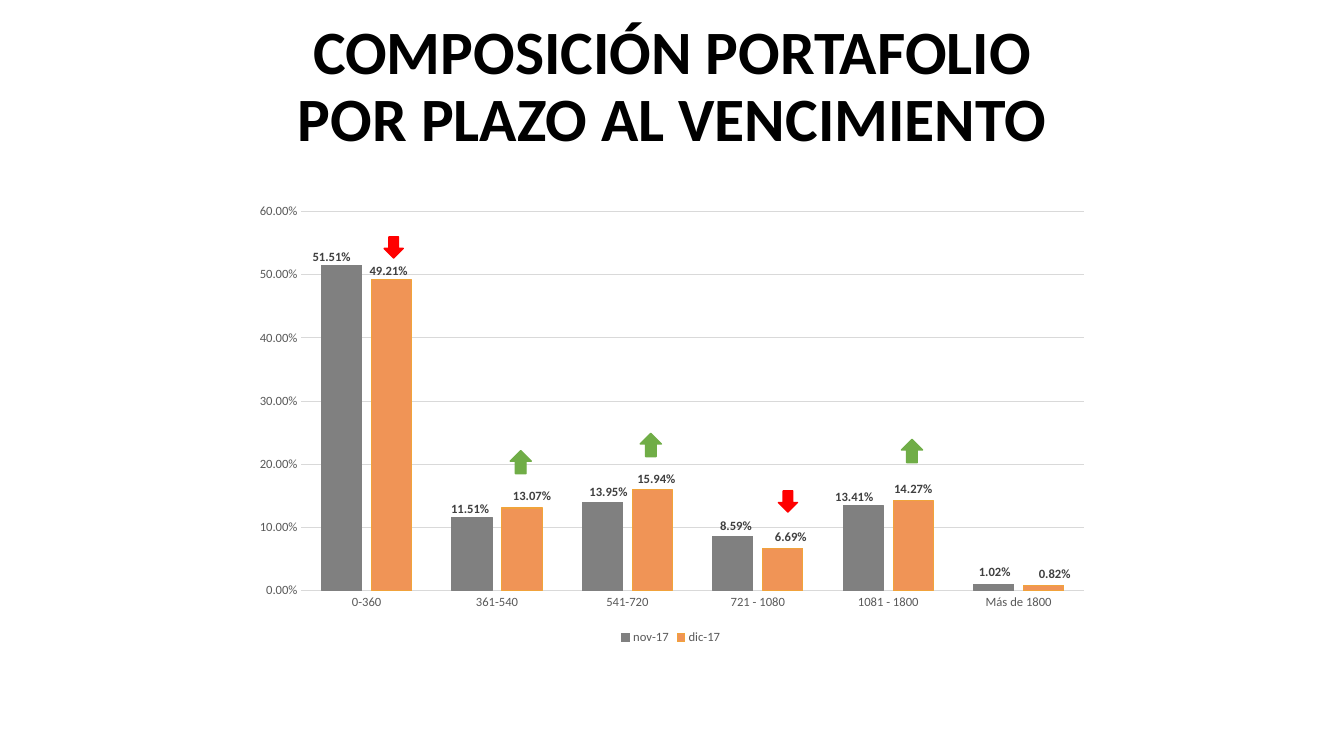
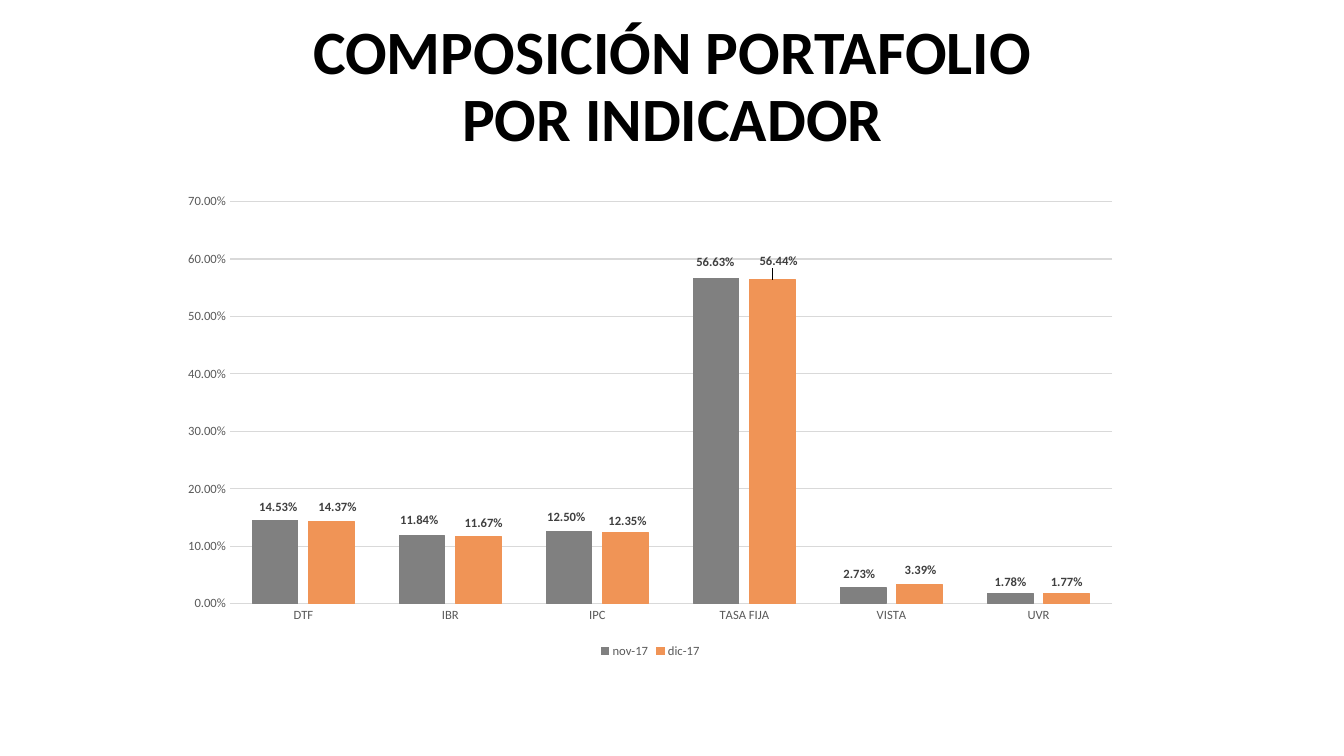
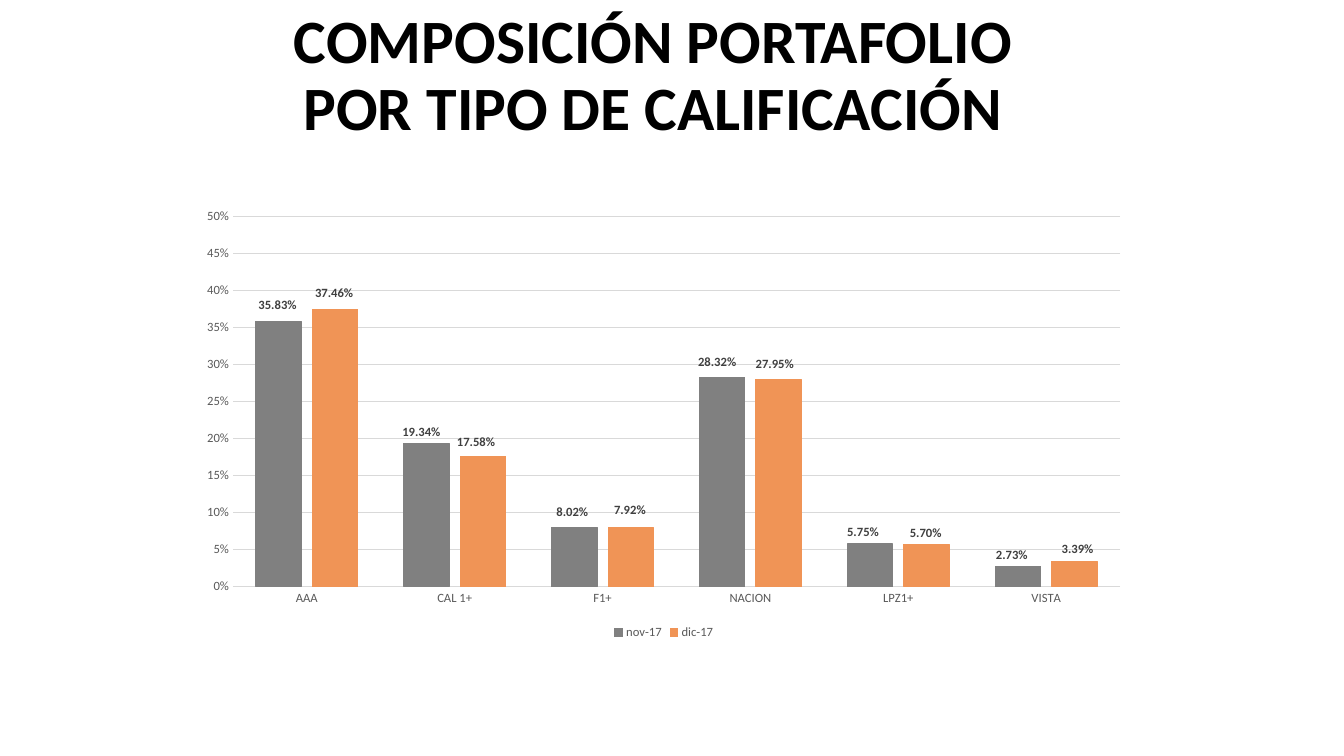
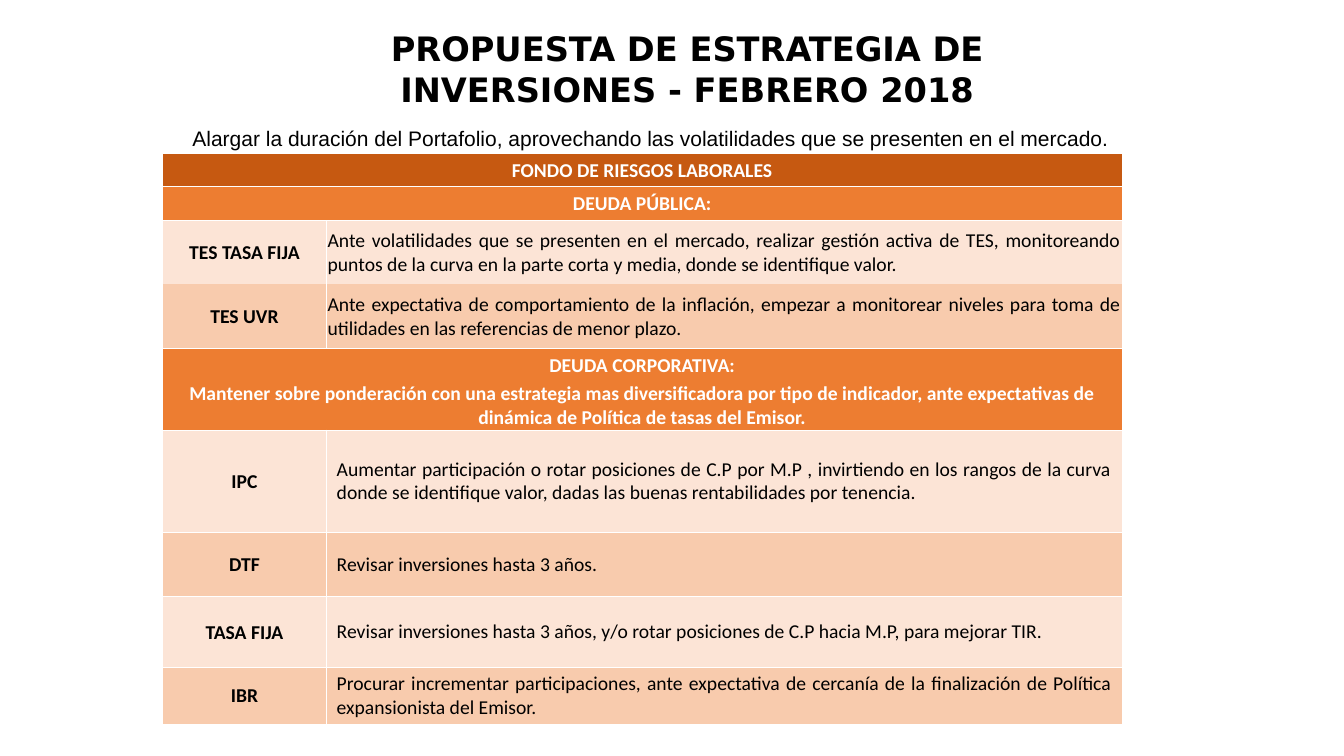
from dataclasses import dataclass

import lxml.etree
import pptx
import pptx.chart.data
import pptx.dml.color
import pptx.enum.chart
import pptx.enum.shapes
import pptx.enum.text
import pptx.oxml.ns
import pptx.util

Inches = pptx.util.Inches
Pt = pptx.util.Pt
qn = pptx.oxml.ns.qn
Align = pptx.enum.text.PP_ALIGN
Anchor = pptx.enum.text.MSO_ANCHOR
Geometry = pptx.enum.shapes.MSO_SHAPE

BLACK, WHITE = "000000", "FFFFFF"
GRAY, ORANGE, GOLD = "808080", "F09456", "F1A33B"
AXIS_TEXT, LABEL_TEXT, GRID = "595959", "404040", "D9D9D9"
RED, GREEN = "FF0000", "70AD47"
HEADER, SECTION, LIGHT, MEDIUM = "C65911", "ED7D31", "FCE4D6", "F8CBAD"


@dataclass(frozen=True)
class Box:
    left: float
    top: float
    width: float
    height: float

    def lengths(self) -> tuple:
        return tuple(Inches(n) for n in (self.left, self.top, self.width, self.height))


@dataclass(frozen=True)
class Series:
    name: str
    values: tuple
    fill: str
    line: str
    label_shifts: tuple


@dataclass(frozen=True)
class ChartSlide:
    title: str
    title_box: Box
    frame: Box
    plot: Box
    maximum: float
    step: float
    axis_format: str
    categories: tuple
    series: tuple
    arrows: tuple = ()


@dataclass(frozen=True)
class Arrow:
    left: float
    top: float
    rising: bool


@dataclass(frozen=True)
class Row:
    height: float
    fill: str
    label: str
    detail: str = ""
    inset_detail: bool = True
    top_line: float = 1
    bottom_line: float = 1


TITLE_BOX = Box(2.42, 0.15, 8.5, 1.45)

CHART_SLIDES = (
    ChartSlide(
        "COMPOSICIÓN PORTAFOLIO POR PLAZO AL VENCIMIENTO",
        TITLE_BOX, Box(2.4, 1.94, 8.51, 4.5), Box(2.99, 2.1, 7.76, 3.76),
        0.6, 0.1, "0.00%",
        ("0-360", "361-540", "541-720", "721 - 1080", "1081 - 1800", "Más de 1800"),
        (
            Series("nov-17", (0.5151, 0.1151, 0.1395, 0.0859, 0.1341, 0.0102), GRAY, GRAY,
                   ((-10, 3), (-2, 3), (6, 1), (3, 1), (-9, 3), (1, -1))),
            Series("dic-17", (0.4921, 0.1307, 0.1594, 0.0669, 0.1427, 0.0082), ORANGE, GOLD,
                   ((-3, 3), (10, 0), (4, 1), (8, 0), (0, 0), (11, 0))),
        ),
        (
            Arrow(3.81, 2.35, False),
            Arrow(7.72, 4.87, False),
            Arrow(8.94, 4.36, True),
            Arrow(6.35, 4.3, True),
            Arrow(5.06, 4.47, True),
        ),
    ),
    ChartSlide(
        "COMPOSICIÓN PORTAFOLIO POR INDICADOR",
        TITLE_BOX, Box(1.68, 1.84, 9.54, 4.73), Box(2.28, 2, 8.75, 3.99),
        0.7, 0.1, "0.00%",
        ("DTF", "IBR", "IPC", "TASA FIJA", "VISTA", "UVR"),
        (
            Series("nov-17", (0.1453, 0.1184, 0.125, 0.5663, 0.0273, 0.0178), GRAY, GRAY,
                   ((3, -2), (-3, -4), (-3, -3), (-1, -5), (-4, -2), (0, 0))),
            Series("dic-17", (0.1437, 0.1167, 0.1235, 0.5644, 0.0339, 0.0177), ORANGE, ORANGE,
                   ((6, -3), (5, -2), (2, 0), (6, -7), (1, -3), (0, 0))),
        ),
    ),
    ChartSlide(
        "COMPOSICIÓN PORTAFOLIO POR TIPO DE CALIFICACIÓN",
        Box(2.23, 0.04, 8.5, 1.45), Box(1.87, 2, 9.43, 4.39), Box(2.31, 2.15, 8.8, 3.67),
        0.5, 0.05, "0%",
        ("AAA", "CAL 1+", "F1+", "NACION", "LPZ1+", "VISTA"),
        (
            Series("nov-17", (0.3583, 0.1934, 0.0802, 0.2832, 0.0575, 0.0273), GRAY, GRAY,
                   ((-1, -5), (-5, 0), (-2, -4), (-5, -3), (-7, 0), (-6, 0))),
            Series("dic-17", (0.3746, 0.1758, 0.0792, 0.2795, 0.057, 0.0339), ORANGE, ORANGE,
                   ((-1, -5), (-7, -3), (-1, -6), (-4, -4), (-1, 0), (3, -1))),
        ),
    ),
)

STRATEGY_ROWS = (
    Row(0.33, HEADER, "FONDO DE RIESGOS LABORALES", bottom_line=1.5),
    Row(0.34, SECTION, "DEUDA PÚBLICA:", top_line=1.5),
    Row(0.63, LIGHT, "TES TASA FIJA",
        "Ante volatilidades que se presenten en el mercado, realizar gestión activa de TES, "
        "monitoreando puntos de la curva en la parte corta y media, donde se identifique valor.",
        inset_detail=False, bottom_line=0),
    Row(0.64, MEDIUM, "TES UVR",
        "Ante expectativa de comportamiento de la inflación, empezar a monitorear niveles "
        "para toma de utilidades en las referencias de menor plazo.",
        inset_detail=False, top_line=0),
    Row(0.32, SECTION, "DEUDA CORPORATIVA:", bottom_line=0),
    Row(0.49, SECTION,
        "Mantener sobre ponderación con una estrategia mas diversificadora por tipo de "
        "indicador, ante expectativas de dinámica de Política de tasas del Emisor.",
        top_line=0),
    Row(1.01, LIGHT, "IPC",
        "Aumentar participación o rotar posiciones de C.P por M.P , invirtiendo en los rangos "
        "de la curva donde se identifique valor, dadas las buenas rentabilidades por tenencia."),
    Row(0.64, MEDIUM, "DTF", "Revisar inversiones hasta 3 años."),
    Row(0.7, LIGHT, "TASA FIJA",
        "Revisar inversiones hasta 3 años, y/o rotar posiciones de C.P hacia M.P, "
        "para mejorar TIR."),
    Row(0.56, MEDIUM, "IBR",
        "Procurar incrementar participaciones, ante expectativa de cercanía de la "
        "finalización de Política expansionista del Emisor."),
)


def color(value: str) -> pptx.dml.color.RGBColor:
    return pptx.dml.color.RGBColor.from_string(value)


def set_font(font, size: float, fill: str, bold: bool = False, name: str = "Calibri") -> None:
    font.name, font.size, font.bold = name, Pt(size), bold
    font.color.rgb = color(fill)


def set_line(line, fill: str, width: float) -> None:
    line.color.rgb = color(fill)
    line.width = Pt(width)


def write(text_frame, text: str, size: float, fill: str, alignment, bold: bool = False,
          name: str = "Calibri", spacing: float = 1) -> None:
    text_frame.word_wrap = True
    paragraph = text_frame.paragraphs[0]
    paragraph.text = text
    paragraph.alignment = alignment
    paragraph.line_spacing = spacing
    set_font(paragraph.font, size, fill, bold, name)


def add_title(slide, text: str, box: Box, size: float = 44, name: str = "Calibri",
              spacing: float = 0.9, anchor=Anchor.MIDDLE) -> None:
    text_frame = slide.shapes.add_textbox(*box.lengths()).text_frame
    text_frame.vertical_anchor = anchor
    write(text_frame, text, size, BLACK, Align.CENTER, True, name, spacing)


def manual_layout(**settings):
    layout = lxml.etree.Element(qn("c:layout"))
    manual = lxml.etree.SubElement(layout, qn("c:manualLayout"))
    for tag, value in settings.items():
        lxml.etree.SubElement(manual, qn(f"c:{tag}")).set("val", str(value))
    return layout


def place_plot(chart, frame: Box, plot: Box) -> None:
    plot_area = chart._chartSpace.chart.plotArea
    for old_layout in plot_area.findall(qn("c:layout")):
        plot_area.remove(old_layout)
    plot_area.insert(0, manual_layout(
        layoutTarget="inner", xMode="edge", yMode="edge",
        x=(plot.left - frame.left) / frame.width,
        y=(plot.top - frame.top) / frame.height,
        w=plot.width / frame.width,
        h=plot.height / frame.height,
    ))


def style_series(drawn, series: Series, frame: Box) -> None:
    drawn.format.fill.solid()
    drawn.format.fill.fore_color.rgb = color(series.fill)
    set_line(drawn.format.line, series.line, 0.75)
    drawn.invert_if_negative = False
    labels = drawn.data_labels
    labels.show_value = True
    labels.number_format, labels.number_format_is_linked = "0.00%", False
    labels.position = pptx.enum.chart.XL_LABEL_POSITION.OUTSIDE_END
    set_font(labels.font, 9, LABEL_TEXT, True)
    for index, (right, down) in enumerate(series.label_shifts):
        if (right, down) == (0, 0):
            continue
        label = drawn.points[index].data_label
        set_font(label.font, 9, LABEL_TEXT, True)
        label.position = pptx.enum.chart.XL_LABEL_POSITION.OUTSIDE_END
        index_element = labels._element.findall(qn("c:dLbl"))[-1].find(qn("c:idx"))
        index_element.addnext(manual_layout(
            x=right / 100 / frame.width, y=down / 100 / frame.height))


def style_axes(chart, content: ChartSlide) -> None:
    no_tick = pptx.enum.chart.XL_TICK_MARK.NONE
    category_axis, value_axis = chart.category_axis, chart.value_axis
    for axis in (category_axis, value_axis):
        axis.major_tick_mark = axis.minor_tick_mark = no_tick
        set_font(axis.tick_labels.font, 9, AXIS_TEXT)
    set_line(category_axis.format.line, GRID, 1)
    value_axis.format.line.fill.background()
    value_axis.minimum_scale, value_axis.maximum_scale = 0, content.maximum
    value_axis.major_unit = content.step
    value_axis.tick_labels.number_format = content.axis_format
    value_axis.tick_labels.number_format_is_linked = False
    set_line(value_axis.major_gridlines.format.line, GRID, 0.75)


def add_column_chart(slide, content: ChartSlide) -> None:
    data = pptx.chart.data.CategoryChartData(number_format="0.00%")
    data.categories = content.categories
    for series in content.series:
        data.add_series(series.name, series.values)
    chart = slide.shapes.add_chart(
        pptx.enum.chart.XL_CHART_TYPE.COLUMN_CLUSTERED, *content.frame.lengths(), data).chart
    set_font(chart.font, 10, BLACK)
    chart.has_title = False
    chart.has_legend = True
    chart.legend.position = pptx.enum.chart.XL_LEGEND_POSITION.BOTTOM
    chart.legend.include_in_layout = False
    set_font(chart.legend.font, 9, AXIS_TEXT)
    columns = chart.plots[0]
    columns.gap_width, columns.overlap, columns.vary_by_categories = 100, -24, False
    style_axes(chart, content)
    for drawn, series in zip(columns.series, content.series):
        style_series(drawn, series, content.frame)
    place_plot(chart, content.frame, content.plot)


def add_arrow(slide, arrow: Arrow) -> None:
    geometry, fill, width, height = (
        (Geometry.UP_ARROW, GREEN, 0.21, 0.23) if arrow.rising
        else (Geometry.DOWN_ARROW, RED, 0.19, 0.21))
    shape = slide.shapes.add_shape(
        geometry, *Box(arrow.left, arrow.top, width, height).lengths())
    shape.shadow.inherit = False
    shape.fill.solid()
    shape.fill.fore_color.rgb = color(fill)
    set_line(shape.line, fill, 1)


def style_cell(cell, row: Row, tight: bool) -> None:
    cell.vertical_anchor = Anchor.MIDDLE
    if tight:
        cell.margin_left = cell.margin_right = cell.margin_top = Inches(0.01)
        cell.margin_bottom = 0
    cell.fill.solid()
    cell.fill.fore_color.rgb = color(row.fill)
    borders = (("L", 1), ("R", 1), ("T", row.top_line), ("B", row.bottom_line))
    properties = cell._tc.get_or_add_tcPr()
    for position, (side, width) in enumerate(borders):
        border = lxml.etree.Element(qn(f"a:ln{side}"), w=str(Pt(width)))
        if width:
            fill = lxml.etree.SubElement(border, qn("a:solidFill"))
            lxml.etree.SubElement(fill, qn("a:srgbClr")).set("val", WHITE)
        else:
            lxml.etree.SubElement(border, qn("a:noFill"))
        properties.insert(position, border)


def add_strategy_table(slide) -> None:
    box = Box(1.61, 1.52, 9.52, sum(row.height for row in STRATEGY_ROWS))
    table = slide.shapes.add_table(len(STRATEGY_ROWS), 2, *box.lengths()).table
    table.first_row = table.horz_banding = False
    for column, width in zip(table.columns, (1.63, 7.89)):
        column.width = Inches(width)
    for index, row in enumerate(STRATEGY_ROWS):
        table.rows[index].height = Inches(row.height)
        label, detail = table.cell(index, 0), table.cell(index, 1)
        style_cell(label, row, True)
        style_cell(detail, row, not (row.detail and row.inset_detail))
        if row.detail:
            write(detail.text_frame, row.detail, 14, BLACK, Align.JUSTIFY)
        else:
            label.merge(detail)
        write(label.text_frame, row.label, 14, BLACK if row.detail else WHITE,
              Align.CENTER, True)


def add_summary(slide) -> None:
    shape = slide.shapes.add_shape(
        Geometry.RECTANGLE, *Box(1.81, 1.07, 11.52, 0.43).lengths())
    shape.shadow.inherit = False
    shape.fill.solid()
    shape.fill.fore_color.rgb = color(WHITE)
    shape.line.fill.background()
    shape.text_frame.vertical_anchor = Anchor.TOP
    write(shape.text_frame,
          "Alargar la duración del Portafolio, aprovechando las volatilidades que se "
          "presenten en el mercado.",
          15, BLACK, Align.JUSTIFY, name="Arial", spacing=1.5)


def main() -> None:
    presentation = pptx.Presentation()
    presentation.slide_width, presentation.slide_height = Inches(13.33), Inches(7.5)
    blank = presentation.slide_layouts[6]
    for content in CHART_SLIDES:
        slide = presentation.slides.add_slide(blank)
        add_column_chart(slide, content)
        add_title(slide, content.title, content.title_box)
        for arrow in content.arrows:
            add_arrow(slide, arrow)
    slide = presentation.slides.add_slide(blank)
    add_summary(slide)
    add_strategy_table(slide)
    add_title(slide, "PROPUESTA DE ESTRATEGIA DE INVERSIONES - FEBRERO 2018",
              Box(3.46, 0.23, 6.71, 0.91), 24, "DejaVu Sans", 1, Anchor.TOP)
    presentation.save("out.pptx")


if __name__ == "__main__":
    main()
